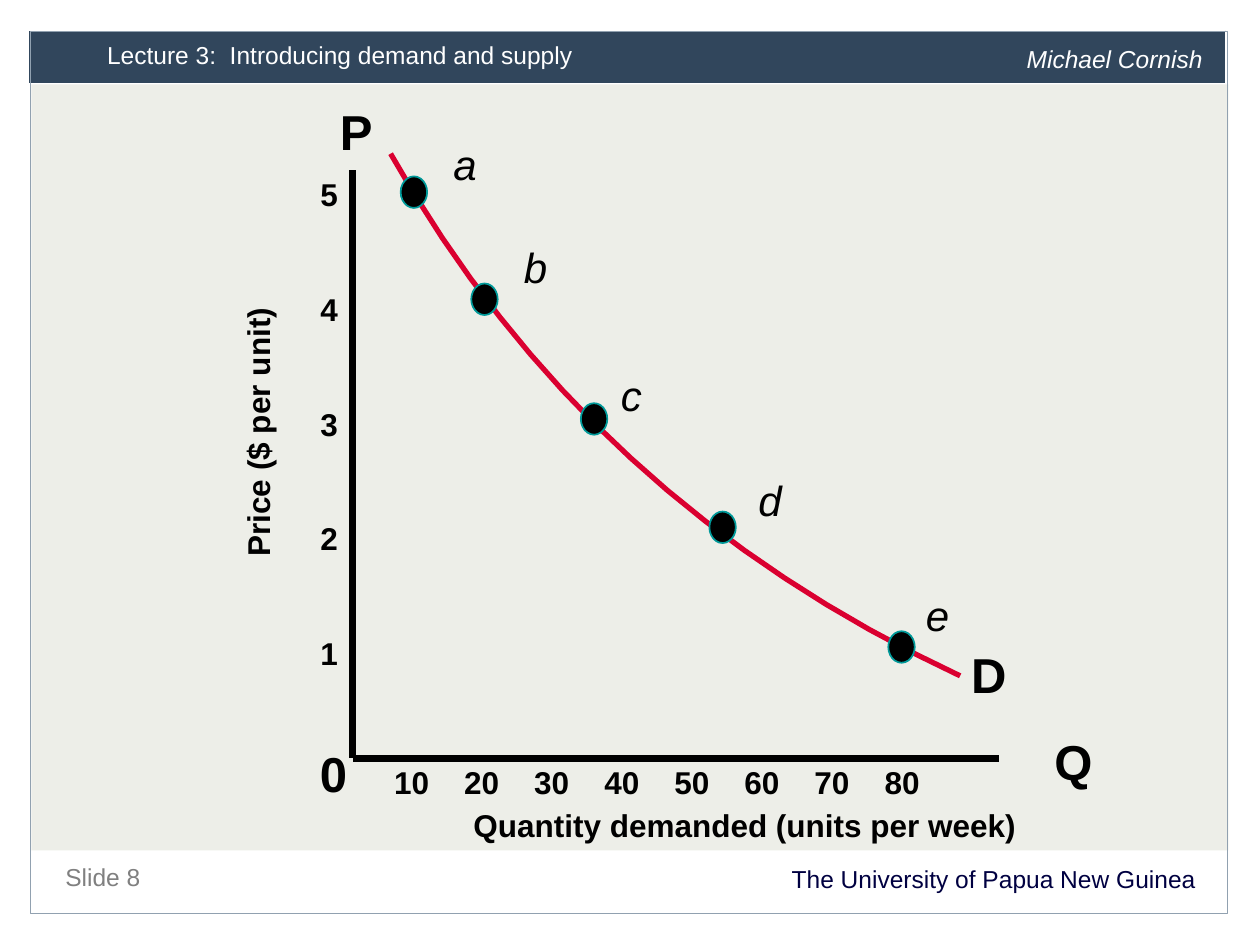
from dataclasses import dataclass
from typing import NamedTuple

from lxml import etree
from pptx import Presentation
from pptx.dml.color import RGBColor
from pptx.enum.shapes import MSO_CONNECTOR, MSO_SHAPE
from pptx.enum.text import MSO_ANCHOR, MSO_AUTO_SIZE, PP_ALIGN
from pptx.oxml.ns import qn
from pptx.util import Inches, Pt

RECT, OVAL = MSO_SHAPE.RECTANGLE, MSO_SHAPE.OVAL
LEFT, RIGHT = PP_ALIGN.LEFT, PP_ALIGN.RIGHT
TOP, MIDDLE = MSO_ANCHOR.TOP, MSO_ANCHOR.MIDDLE
STRAIGHT, FIXED = MSO_CONNECTOR.STRAIGHT, MSO_AUTO_SIZE.NONE

# The slide is a grid of 100 columns and 75 rows
COLS, ROWS = 100, 75
CELL = Inches(0.1)


@dataclass(frozen=True)
class Theme:
    font: str = "Arial"
    white: str = "FFFFFF"
    black: str = "000000"
    panel: str = "EDEEE8"
    band: str = "31465C"
    frame: str = "91A1B0"
    navy: str = "000041"
    grey: str = "808080"
    curve: str = "DA0030"
    rim: str = "009999"
    small: int = 14
    tick: int = 18
    mark: int = 24
    big: int = 28


class Box(NamedTuple):
    x: float
    y: float
    w: float
    h: float


class Style(NamedTuple):
    size: int
    color: str
    bold: bool = False
    slant: bool = False
    align: int = LEFT
    lead: int = 0


class Dot(NamedTuple):
    name: str
    x: float
    y: float
    tx: float
    ty: float


T = Theme()
TICK = Style(T.tick, T.black, bold=True)
BIG = Style(T.big, T.black, bold=True)
MARK = Style(T.mark, T.black, slant=True)

DOTS = [
    Dot("a", 31.8, 14, 35, 10.5),
    Dot("b", 37.4, 22.5, 40.6, 18.7),
    Dot("c", 46.1, 32, 48.3, 28.8),
    Dot("d", 56.3, 40.6, 59.2, 37.2),
    Dot("e", 70.5, 50.1, 72.5, 46.3),
]
NAMES = [
    ("D", Box(76.1, 50.7, 4.8, 5.7)),
    ("P", Box(26, 7.6, 4.6, 5.7)),
    ("Q", Box(82.7, 57.6, 5, 5.7)),
    ("0", Box(24.4, 58.5, 4.1, 5.6)),
]


def cell(n: float) -> int:
    return round(n * CELL)


def rgb(code: str) -> RGBColor:
    return RGBColor.from_string(code)


def place(shape, box: Box) -> None:
    shape.left, shape.top, shape.width, shape.height = map(cell, box)


def write(shape, text: str, style: Style, wrap: bool = True, anchor=TOP) -> None:
    frame = shape.text_frame
    frame.text = text
    frame.word_wrap = wrap
    frame.auto_size = FIXED
    frame.vertical_anchor = anchor
    for para in frame.paragraphs:
        para.alignment = style.align
        if style.lead:
            para.line_spacing = Pt(style.lead)
        for run in para.runs:
            font = run.font
            font.name, font.size = T.font, Pt(style.size)
            font.bold, font.italic = style.bold, style.slant
            font.color.rgb = rgb(style.color)


def label(shapes, text: str, box: Box, style: Style, wrap=False, anchor=TOP):
    item = shapes.add_textbox(*map(cell, box))
    write(item, text, style, wrap, anchor)
    return item


def paint(shape, fill: str = "", line: str = "", width: float = 1) -> None:
    shape.shadow.inherit = False
    if fill:
        shape.fill.solid()
        shape.fill.fore_color.rgb = rgb(fill)
    else:
        shape.fill.background()
    if line:
        shape.line.color.rgb = rgb(line)
        shape.line.width = Pt(width)
    else:
        shape.line.fill.background()


def block(shapes, kind, box: Box, fill="", line="", width=1.0) -> None:
    paint(shapes.add_shape(kind, *map(cell, box)), fill, line, width)


def axis(shapes, x1: float, y1: float, x2: float, y2: float) -> None:
    line = shapes.add_connector(STRAIGHT, *map(cell, (x1, y1, x2, y2)))
    line.line.color.rgb = rgb(T.black)
    line.line.width = Pt(4)
    etree.SubElement(line.element.spPr, qn("a:effectLst"))


def page(slide) -> None:
    shapes = slide.shapes
    # Panel, band and outer frame
    block(shapes, RECT, Box(2.5, 6.7, 95, 60.8), T.panel)
    block(shapes, RECT, Box(2.3, 2.4, 95, 4.2), T.band, T.white, 0.5)
    block(shapes, RECT, Box(2.4, 2.5, 95, 70), "", T.frame, 0.75)
    # Header, raised above the band
    title = shapes.title
    shapes.element.append(title.element)
    place(title, Box(7.5, 2.5, 61.3, 3.7))
    write(title, "Lecture 3:  Introducing demand and supply",
          Style(T.small, T.white, lead=18))
    label(shapes, "Michael Cornish", Box(80.5, 2.8, 16.4, 3.7),
          Style(T.small, T.white, slant=True, lead=18), wrap=True)
    # Footer
    label(shapes, "The University of Papua New Guinea", Box(4.2, 68.3, 91.7, 3.2),
          Style(T.small, T.navy, align=RIGHT, lead=15), wrap=True)
    label(shapes, "Slide 8", Box(4.2, 67.5, 43.3, 3.4),
          Style(T.small, T.grey, lead=20), wrap=True)


def scales(shapes) -> None:
    axis(shapes, 28, 13.5, 28, 60.2)
    axis(shapes, 28, 60.2, 79.3, 60.2)
    for text, box in NAMES:
        label(shapes, text, box, BIG)
    # Prices, evenly spaced down the axis
    prices = label(shapes, "\n".join("54321"), Box(24.4, 13.4, 3.4, 40),
                   TICK._replace(align=RIGHT))
    for para in prices.text_frame.paragraphs[1:]:
        para.space_before = Pt(44)
    # Quantities, one tab stop each
    amounts = range(10, 90, 10)
    row = label(shapes, "\t".join(map(str, amounts)), Box(30.3, 60.1, 49.4, 4),
                TICK, wrap=True)
    props = row.text_frame.paragraphs[0]._p.get_or_add_pPr()
    tabs = etree.SubElement(props, qn("a:tabLst"))
    for i in range(1, len(amounts)):
        etree.SubElement(tabs, qn("a:tab"), pos=str(cell(5.56 * i)), algn="l")
    # Axis titles
    price = label(shapes, "Price ($ per unit)", Box(9.6, 32.3, 21.7, 4),
                  TICK, anchor=MIDDLE)
    price.rotation = 270
    label(shapes, "Quantity demanded (units per week)",
          Box(36.6, 63.5, 45, 4), TICK, anchor=MIDDLE)


def demand(shapes) -> None:
    # Both coordinates are quadratic in the step
    points = [(cell(31 + 1.945 * i + 0.055 * i * i),
               cell(12.2 + 3.454 * i - 0.054 * i * i)) for i in range(17)]
    path = shapes.build_freeform(*points[0])
    path.add_line_segments(points[1:], close=False)
    paint(path.convert_to_shape(), "", T.curve, 3)
    for dot in DOTS:
        block(shapes, OVAL, Box(dot.x, dot.y, 2.1, 2.5), T.black, T.rim)
        label(shapes, dot.name, Box(dot.tx, dot.ty, 3.9, 5), MARK)


def main() -> None:
    deck = Presentation()
    deck.slide_width, deck.slide_height = cell(COLS), cell(ROWS)
    slide = deck.slides.add_slide(deck.slide_layouts[5])
    page(slide)
    scales(slide.shapes)
    demand(slide.shapes)
    deck.save("out.pptx")


if __name__ == "__main__":
    main()
